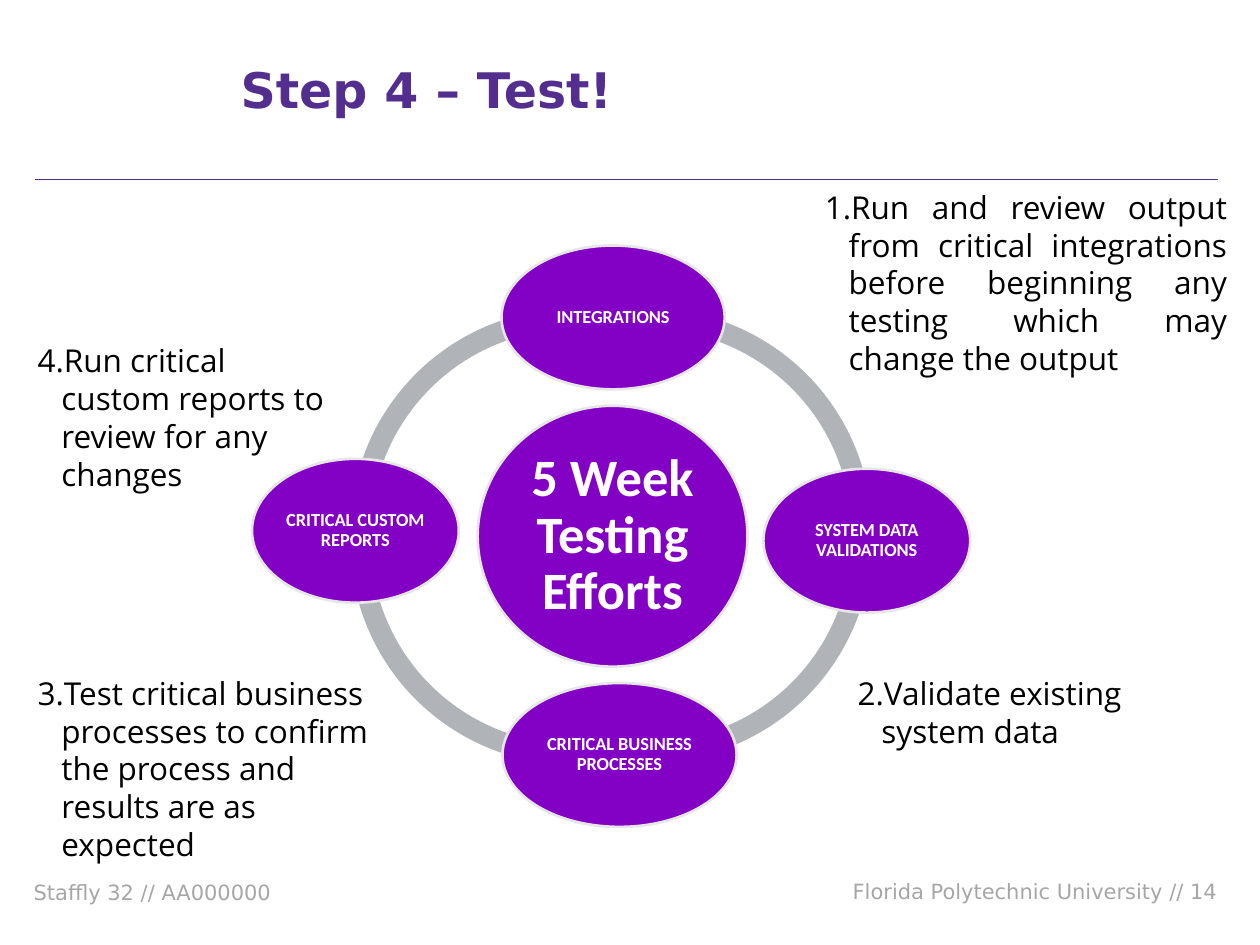
from lxml.etree import SubElement
from pptx import Presentation
from pptx.dml.color import RGBColor
from pptx.enum.shapes import MSO_CONNECTOR, MSO_SHAPE
from pptx.enum.text import MSO_ANCHOR, MSO_AUTO_SIZE, PP_ALIGN
from pptx.oxml.ns import qn
from pptx.util import Cm, Pt

PURPLE = RGBColor(0x83, 0x00, 0xC5)
INDIGO = RGBColor(0x54, 0x2E, 0x8E)
RING_GRAY = RGBColor(0xB0, 0xB4, 0xB9)
EDGE_GRAY = RGBColor(0xE7, 0xE6, 0xE6)
FOOTER_GRAY = RGBColor(0xA6, 0xA6, 0xA6)
WHITE = RGBColor(0xFF, 0xFF, 0xFF)
BLACK = RGBColor(0x00, 0x00, 0x00)

HEADING_FONT = "DejaVu Sans"
DIAGRAM_FONT = "Calibri"
STEP_FONT = "Open Sans"

TITLE = ("Step 4 – Test!", (4.6, 1.07, 23.6, 1.45))
FOOTERS = [
    ("Staffly 32 // AA000000", (0.43, 17.6, 9.55, 0.91), PP_ALIGN.LEFT),
    ("Florida Polytechnic University // 14", (14.43, 17.58, 10.36, 0.91), PP_ALIGN.RIGHT),
]
RULE_LEFT, RULE_RIGHT, RULE_TOP = 0.71, 24.56, 3.61

ARC_SIZE = 9.02
ARC_THICKNESS = 0.046
ARCS = [
    (7.06, 6.22, 180.6, 280.3),
    (7.06, 6.4, 77.7, 182.9),
    (8.56, 6.35, 0.5, 97.5),
    (8.56, 6.22, 260.4, 1.9),
]
HUB = ("5 Week Testing Efforts", (9.63, 8.18, 5.44, 5.26))
NODE_HEIGHT = 2.9
NODES = [
    ("INTEGRATIONS", 10.11, 4.95, 4.5),
    ("SYSTEM DATA VALIDATIONS", 15.39, 9.45, 4.17),
    ("CRITICAL BUSINESS PROCESSES", 10.13, 13.77, 4.72),
    ("CRITICAL CUSTOM REPORTS", 5.08, 9.25, 4.17),
]

STEP_INDENT = 0.48
STEPS = [
    ("Run and review output from critical integrations before beginning any "
     "testing which may change the output", (16.38, 3.66, 8.61, 4.11), PP_ALIGN.JUSTIFY),
    ("Validate existing system data", (17.04, 13.46, 6.22, 1.8), PP_ALIGN.LEFT),
    ("Test critical business processes to confirm the process and results "
     "are as expected", (0.51, 13.46, 7.54, 4.11), PP_ALIGN.LEFT),
    ("Run critical custom reports to review for any changes",
     (0.51, 6.76, 6.45, 2.57), PP_ALIGN.LEFT),
]


def add_span(para, text, font, size, color, bold=False):
    span = para.add_run()
    span.text = text
    span.font.name = font
    span.font.size = Pt(size)
    span.font.bold = bold
    span.font.color.rgb = color


def add_box(page, place, align=PP_ALIGN.LEFT, grow=False):
    frame = page.shapes.add_textbox(*map(Cm, place)).text_frame
    frame.word_wrap = True
    if grow:
        frame.auto_size = MSO_AUTO_SIZE.SHAPE_TO_FIT_TEXT
    para = frame.paragraphs[0]
    para.alignment = align
    return para


def add_filled(page, kind, place, color):
    shape = page.shapes.add_shape(kind, *map(Cm, place))
    shape.shadow.inherit = False
    shape.fill.solid()
    shape.fill.fore_color.rgb = color
    return shape


def add_rule(page):
    rule = page.shapes.add_connector(
        MSO_CONNECTOR.STRAIGHT, Cm(RULE_LEFT), Cm(RULE_TOP), Cm(RULE_RIGHT), Cm(RULE_TOP))
    rule.line.color.rgb = INDIGO
    rule.line.width = Pt(0.5)
    SubElement(rule._element.spPr, qn("a:effectLst"))


def add_arc(page, left, top, start, end):
    arc = add_filled(page, MSO_SHAPE.BLOCK_ARC, (left, top, ARC_SIZE, ARC_SIZE), RING_GRAY)
    arc.line.fill.background()
    arc.adjustments[0] = start * 0.6
    arc.adjustments[1] = end * 0.6
    arc.adjustments[2] = ARC_THICKNESS


def add_ellipse(page, text, place, size, inset):
    ellipse = add_filled(page, MSO_SHAPE.OVAL, place, PURPLE)
    ellipse.line.color.rgb = EDGE_GRAY
    ellipse.line.width = Pt(1.5)
    frame = ellipse.text_frame
    frame.word_wrap = True
    frame.vertical_anchor = MSO_ANCHOR.MIDDLE
    frame.margin_left = frame.margin_right = Cm(inset)
    frame.margin_top = frame.margin_bottom = Cm(inset)
    para = frame.paragraphs[0]
    para.alignment = PP_ALIGN.CENTER
    para.line_spacing = 0.9
    add_span(para, text, DIAGRAM_FONT, size, WHITE, bold=True)


def add_step(page, number, text, place, align):
    para = add_box(page, place, align, grow=True)
    props = para._p.get_or_add_pPr()
    props.set("marL", str(Cm(STEP_INDENT)))
    props.set("indent", str(-Cm(STEP_INDENT)))
    SubElement(props, qn("a:buAutoNum"), type="arabicPeriod", startAt=str(number))
    add_span(para, text, STEP_FONT, 18, BLACK)


def main():
    deck = Presentation()
    deck.slide_width, deck.slide_height = Cm(25.4), Cm(19.05)
    page = deck.slides.add_slide(deck.slide_layouts[6])

    for text, place, align in FOOTERS:
        add_span(add_box(page, place, align), text, HEADING_FONT, 12, FOOTER_GRAY)
    title, place = TITLE
    add_span(add_box(page, place, grow=True), title, HEADING_FONT, 28, INDIGO, bold=True)
    add_rule(page)

    for arc in ARCS:
        add_arc(page, *arc)
    add_ellipse(page, *HUB, size=30, inset=0.1)
    for text, left, top, width in NODES:
        add_ellipse(page, text, (left, top, width, NODE_HEIGHT), size=10.5, inset=0.05)

    for number, step in enumerate(STEPS, start=1):
        add_step(page, number, *step)

    deck.save("out.pptx")


if __name__ == "__main__":
    main()
